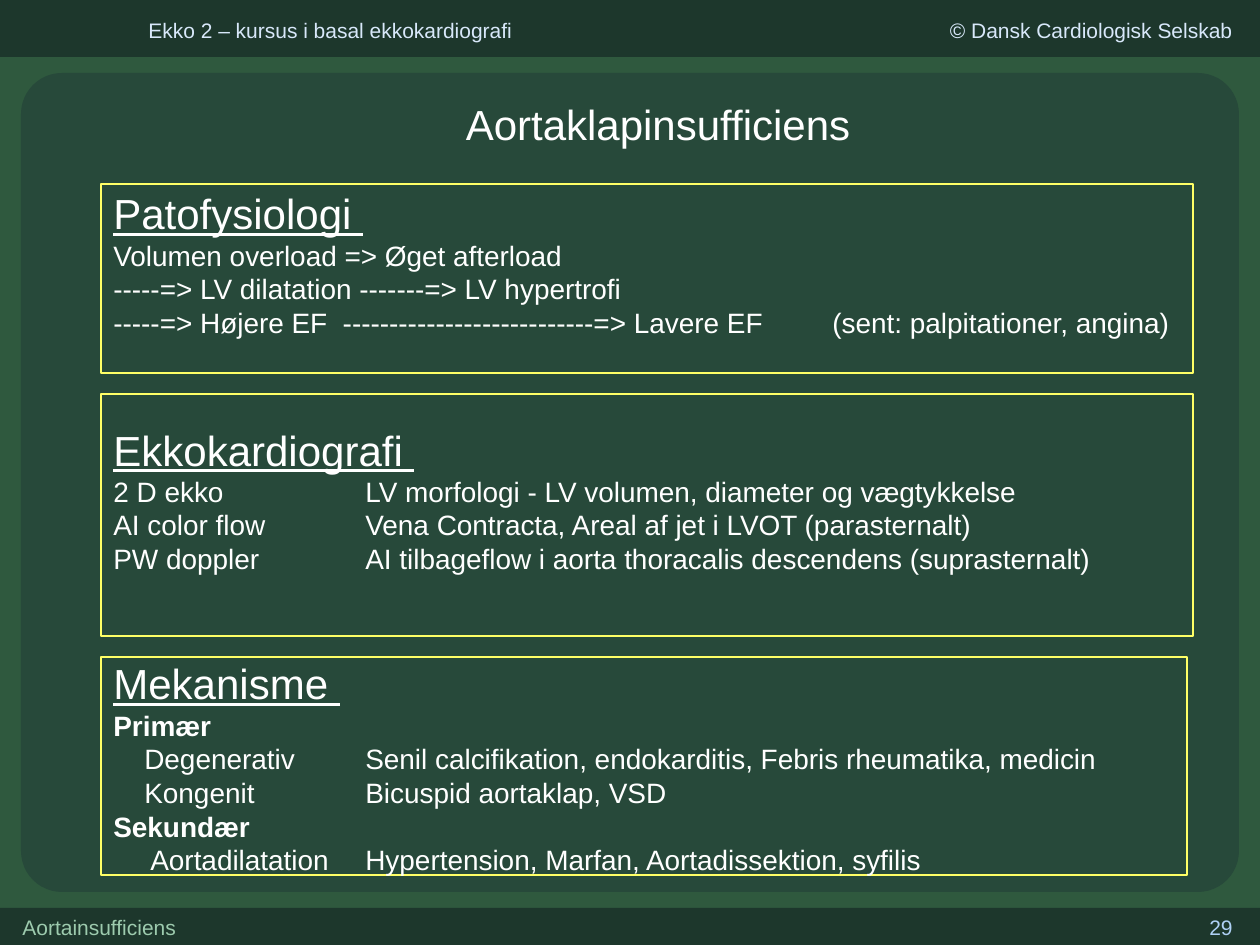
from lxml import etree
from pptx import Presentation
from pptx.dml.color import RGBColor
from pptx.enum.shapes import MSO_SHAPE
from pptx.enum.text import MSO_ANCHOR, PP_ALIGN
from pptx.oxml.ns import qn
from pptx.util import Emu, Pt

PX = 914400 / 126
WIDTH, HEIGHT = 1260, 945
RECT, ROUNDED = MSO_SHAPE.RECTANGLE, MSO_SHAPE.ROUNDED_RECTANGLE
TOP, MIDDLE = MSO_ANCHOR.TOP, MSO_ANCHOR.MIDDLE
LEFT, CENTER, RIGHT = PP_ALIGN.LEFT, PP_ALIGN.CENTER, PP_ALIGN.RIGHT
GREEN = RGBColor(0x2F, 0x59, 0x3E)
BAND = RGBColor(0x1D, 0x37, 0x2C)
PANEL = RGBColor(0x27, 0x49, 0x3A)
YELLOW = RGBColor(0xFF, 0xFF, 0x66)
WHITE = RGBColor(0xFF, 0xFF, 0xFF)
HEADER = RGBColor(0xD8, 0xE8, 0xFA)
NUMBER = RGBColor(0xAF, 0xD0, 0xF5)
TOPIC = RGBColor(0x9D, 0xCB, 0xAE)
FONT = "Arial"
COLUMN = 252

PATHOPHYSIOLOGY = [
    ("Volumen overload => Øget afterload", ()),
    ("-----=> LV dilatation -------=> LV hypertrofi", ()),
    ("-----=> Højere EF  ---------------------------=> Lavere EF"
     "\t(sent: palpitationer, angina)", (719,)),
]
ECHO = [
    ("2 D ekko\tLV morfologi - LV volumen, diameter og vægtykkelse", (COLUMN,)),
    ("AI color flow\tVena Contracta, Areal af jet i LVOT (parasternalt)", (COLUMN,)),
    ("PW doppler\tAI tilbageflow i aorta thoracalis descendens (suprasternalt)",
     (COLUMN,)),
]
MECHANISM = [
    ("Primær", ()),
    ("\tDegenerativ\tSenil calcifikation, endokarditis, Febris rheumatika, medicin",
     (31, COLUMN)),
    ("\tKongenit\tBicuspid aortaklap, VSD", (31, COLUMN)),
    ("Sekundær", ()),
    ("\tAortadilatation\tHypertension, Marfan, Aortadissektion, syfilis", (37, COLUMN)),
]
GROUPS = ("Primær", "Sekundær")


def px(length):
    """Turn pixels into EMU."""
    return Emu(round(length * PX))


class SlideBuilder:
    """Hold the style and the current slide."""

    def __init__(self, slide):
        self.slide = slide
        slide.background.fill.solid()
        slide.background.fill.fore_color.rgb = GREEN

    def panel(self, box, color, kind=RECT):
        """Add a filled shape without outline."""
        shape = self.slide.shapes.add_shape(kind, *map(px, box))
        shape.shadow.inherit = False
        shape.fill.solid()
        shape.fill.fore_color.rgb = color
        shape.line.fill.background()
        return shape

    def line_of_text(self, paragraph, text, size, color, tabs=(), bold=False,
                     underline=False):
        """Fill one paragraph and format its runs."""
        paragraph.text = text
        if tabs:
            stops = etree.SubElement(paragraph._p.get_or_add_pPr(), qn("a:tabLst"))
            for tab in tabs:
                etree.SubElement(stops, qn("a:tab"), pos=str(px(tab)), algn="l")
        for run in paragraph.runs:
            run.font.name = FONT
            run.font.size = Pt(size)
            run.font.color.rgb = color
            run.font.bold = bold
            run.font.underline = underline

    def label(self, box, text, color, align=LEFT, size=12):
        """Add a one-line text box."""
        frame = self.slide.shapes.add_textbox(*map(px, box)).text_frame
        frame.word_wrap = True
        self.line_of_text(frame.paragraphs[0], text, size, color)
        frame.paragraphs[0].alignment = align
        return frame

    def title(self, box, text):
        """Add the slide title."""
        frame = self.label(box, text, WHITE, CENTER, 24)
        frame.vertical_anchor = MIDDLE
        frame.margin_left = frame.margin_top = frame.margin_bottom = 0
        frame.margin_right = px(15)

    def section(self, box, inset, heading, lines):
        """Add an outlined box with a heading and its lines."""
        shape = self.slide.shapes.add_shape(RECT, *map(px, box))
        shape.shadow.inherit = False
        shape.fill.background()
        shape.line.color.rgb = YELLOW
        shape.line.width = Pt(1)
        frame = shape.text_frame
        frame.word_wrap = True
        frame.vertical_anchor = TOP
        frame.margin_top = px(inset)
        frame.margin_bottom = 0
        self.line_of_text(frame.paragraphs[0], heading, 24, WHITE, underline=True)
        for text, tabs in lines:
            self.line_of_text(frame.add_paragraph(), text, 16, WHITE, tabs,
                              text in GROUPS)
        for paragraph in frame.paragraphs:
            paragraph.alignment = LEFT


def main():
    """Build and save the slide."""
    deck = Presentation()
    deck.slide_width, deck.slide_height = px(WIDTH), px(HEIGHT)
    page = SlideBuilder(deck.slides.add_slide(deck.slide_layouts[6]))
    page.panel((0, 908, WIDTH, 37), BAND)
    page.panel((0, 0, WIDTH, 57), BAND)
    page.panel((21, 73, 1218, 819), PANEL, ROUNDED).adjustments[0] = 0.05
    page.label((136, 11, 473, 38), "Ekko 2 – kursus i basal ekkokardiografi", HEADER)
    page.label((868, 11, 377, 38), "© Dansk Cardiologisk Selskab", HEADER, RIGHT)
    page.title((88, 97, 1155, 53), "Aortaklapinsufficiens")
    page.section((101, 184, 1092, 189), 4, "Patofysiologi ", PATHOPHYSIOLOGY)
    page.section((101, 394, 1092, 242), 30, "Ekkokardiografi ", ECHO)
    page.section((101, 657, 1086, 218), 1, "Mekanisme ", MECHANISM)
    page.label((951, 908, 294, 32), "29", NUMBER, RIGHT)
    page.label((10, 908, 399, 32), "Aortainsufficiens", TOPIC)
    deck.save("out.pptx")


if __name__ == "__main__":
    main()
